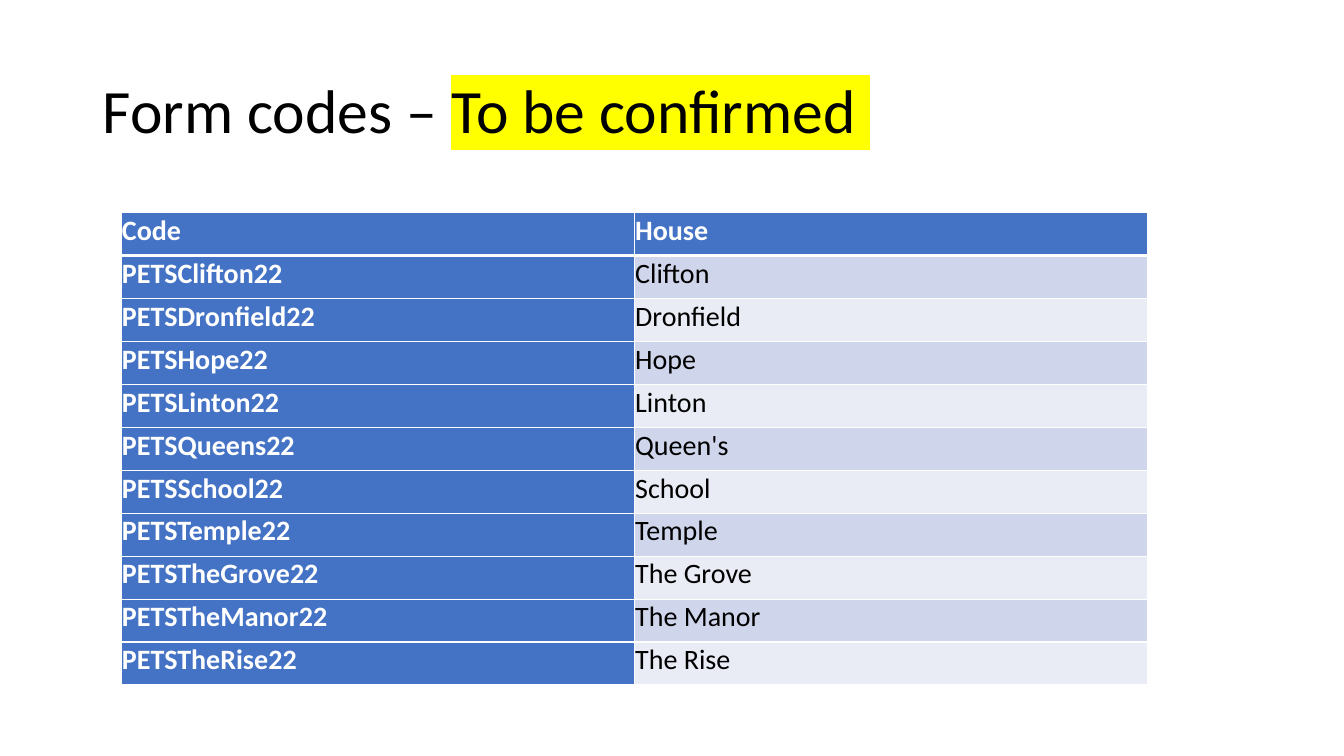
import pptx
import pptx.dml.color
import pptx.enum.text
import pptx.oxml
import pptx.oxml.ns
import pptx.util
from pptx.util import Inches

RGBColor = pptx.dml.color.RGBColor
BLACK = RGBColor(0x00, 0x00, 0x00)
WHITE = RGBColor(0xFF, 0xFF, 0xFF)
YELLOW = RGBColor(0xFF, 0xFF, 0x00)
BLUE = RGBColor(0x44, 0x72, 0xC4)
BANDS = [RGBColor(0xCF, 0xD5, 0xEA), RGBColor(0xE9, 0xEB, 0xF5)]
FONT = "Calibri"
NAMESPACE = pptx.oxml.ns.nsdecls("a")

HOUSES = ["Clifton", "Dronfield", "Hope", "Linton", "Queen's", "School",
          "Temple", "The Grove", "The Manor", "The Rise"]


def format_font(font, size, color, bold=False):
    font.name = FONT
    font.size = pptx.util.Pt(size)
    font.bold = bold
    font.color.rgb = color


def add_border(cell, side, points):
    cell._tc.get_or_add_tcPr().append(pptx.oxml.parse_xml(
        f'<a:{side} {NAMESPACE} w="{pptx.util.Pt(points)}">'
        f'<a:solidFill><a:srgbClr val="{WHITE}"/></a:solidFill></a:{side}>'))


presentation = pptx.Presentation()
presentation.slide_width = Inches(13.33)
presentation.slide_height = Inches(7.5)
slide = presentation.slides.add_slide(presentation.slide_layouts[5])

title = slide.shapes.title
title.left, title.top = Inches(0.92), Inches(0.4)
title.width, title.height = Inches(11.5), Inches(1.45)
title.text_frame.auto_size = pptx.enum.text.MSO_AUTO_SIZE.NONE
title.text_frame.vertical_anchor = pptx.enum.text.MSO_ANCHOR.MIDDLE
heading = title.text_frame.paragraphs[0]
heading.alignment = pptx.enum.text.PP_ALIGN.LEFT
heading.line_spacing = 0.9
for words in ["Form codes – ", "To be confirmed "]:
    status = heading.add_run()
    status.text = words
    format_font(status.font, 44, BLACK)
highlight = pptx.oxml.parse_xml(
    f'<a:highlight {NAMESPACE}><a:srgbClr val="{YELLOW}"/></a:highlight>')
status.font._element.find(pptx.oxml.ns.qn("a:solidFill")).addnext(highlight)

rows = [("Code", "House")]
for house in HOUSES:
    rows.append(("PETS" + house.replace(" ", "").replace("'", "").title() + "22"
                 if " " not in house else "PETS" + house.replace(" ", "") + "22", house))

form_codes = slide.shapes.add_table(
    len(rows), 2, Inches(1.2), Inches(2.11), Inches(10.18), Inches(4.69)).table
for column in form_codes.columns:
    column.width = Inches(5.09)

for row_index, row in enumerate(rows):
    form_codes.rows[row_index].height = Inches(4.69 / len(rows))
    for column_index, words in enumerate(row):
        cell = form_codes.cell(row_index, column_index)
        cell.margin_left = cell.margin_right = Inches(0.01)
        cell.margin_top = cell.margin_bottom = Inches(0.01)
        cell.text_frame.text = words
        is_heading = row_index == 0 or column_index == 0
        format_font(cell.text_frame.paragraphs[0].runs[0].font, 20,
                    WHITE if is_heading else BLACK, is_heading)
        add_border(cell, "lnL", 1)
        add_border(cell, "lnR", 1)
        add_border(cell, "lnT", 3 if row_index == 1 else 1)
        add_border(cell, "lnB", 3 if row_index == 0 else 1)
        cell.fill.solid()
        cell.fill.fore_color.rgb = BLUE if is_heading else BANDS[(row_index - 1) % 2]

presentation.save("out.pptx")
